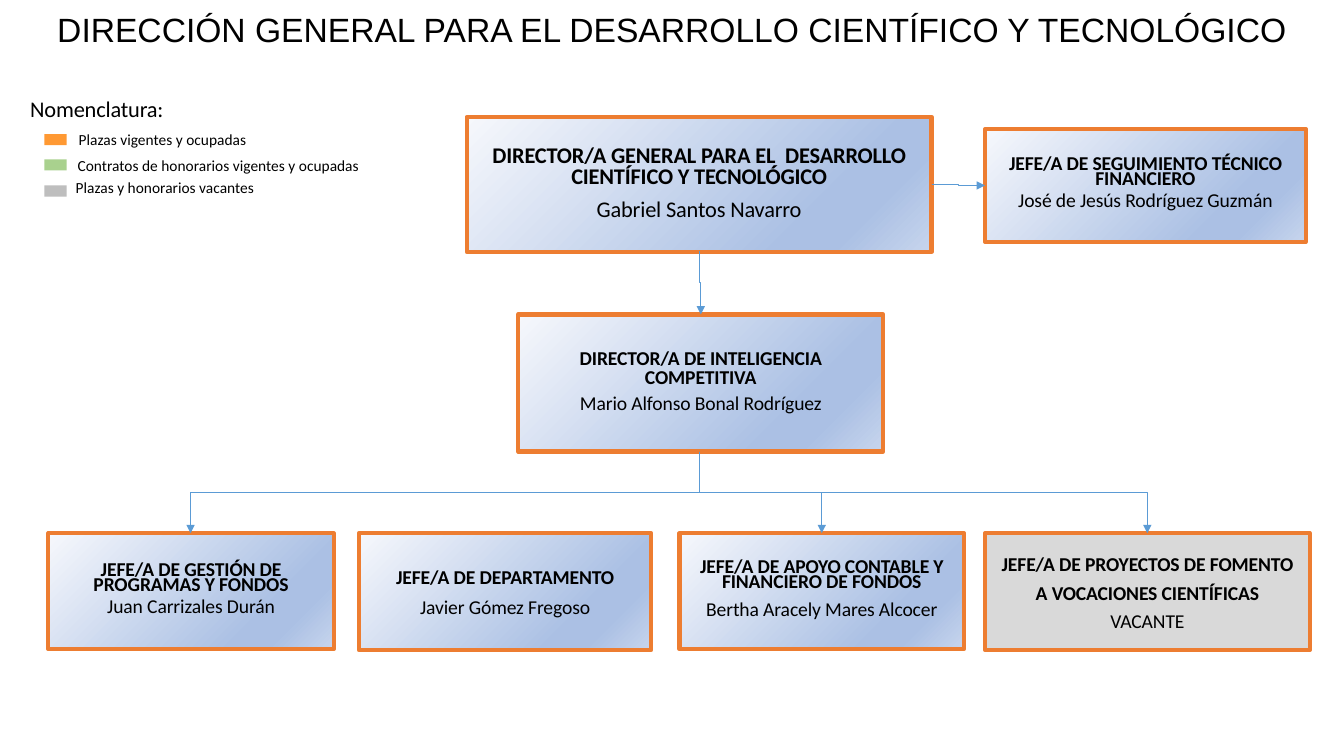
from dataclasses import dataclass

from lxml.etree import SubElement
from pptx import Presentation
from pptx.dml.color import RGBColor
from pptx.enum.shapes import MSO_CONNECTOR, MSO_SHAPE
from pptx.enum.text import MSO_ANCHOR as Anchor, PP_ALIGN as Align
from pptx.oxml.ns import qn
from pptx.util import Pt

PX = 9144  # EMU per px, 100 px to the inch
ORANGE, BLUE, BLACK, VACANT_GREY = "ED7D31", "5B9BD5", "000000", "D9D9D9"
GRADIENT = ((0, "F6F8FC"), (74, "ABC0E4"), (83, "ABC0E4"), (100, "C7D5ED"))


@dataclass
class Line:
    text: str
    size: float
    bold: bool = False
    before: float = 0
    spacing: float | None = None  # points as Pt, or a multiple
    font: str = "Calibri"
    tracking: int = -10
    align: Align = Align.CENTER


@dataclass
class Post:
    left: int
    top: int
    width: int
    height: int
    lines: list[Line]
    vacant: bool = False


@dataclass
class Key:
    color: str
    swatch_top: int
    label: str
    left: int
    top: int
    width: int


@dataclass
class Link:
    start: tuple[int, int]
    end: tuple[int, int]
    vertical: bool = True


def px(value: float) -> int:
    return round(value * PX)


def rgb(color: str) -> RGBColor:
    return RGBColor.from_string(color)


def write(frame, lines: list[Line]) -> None:
    frame.word_wrap = True
    for index, line in enumerate(lines):
        paragraph = frame.add_paragraph() if index else frame.paragraphs[0]
        paragraph.alignment = line.align
        paragraph.space_before = Pt(line.before)
        if line.spacing:
            paragraph.line_spacing = line.spacing
        run = paragraph.add_run()
        run.text = line.text
        run.font.name, run.font.size, run.font.bold = line.font, Pt(line.size), line.bold
        run.font.color.rgb = rgb(BLACK)
        run.font._element.set("spc", str(line.tracking))


def add_rect(slide, left: int, top: int, width: int, height: int):
    rect = slide.shapes.add_shape(MSO_SHAPE.RECTANGLE, px(left), px(top), px(width), px(height))
    rect.shadow.inherit = False
    return rect


def fill_solid(shape, color: str) -> None:
    shape.fill.solid()
    shape.fill.fore_color.rgb = rgb(color)


def fill_gradient(shape) -> None:
    shape.fill.gradient()
    shape.fill.gradient_angle = 315
    stops = shape._element.spPr.find(qn("a:gradFill")).find(qn("a:gsLst"))
    for stop in list(stops):
        stops.remove(stop)
    for position, color in GRADIENT:
        stop = SubElement(stops, qn("a:gs"), pos=str(position * 1000))
        SubElement(stop, qn("a:srgbClr"), val=color)


def add_post(slide, post: Post) -> None:
    box = add_rect(slide, post.left, post.top, post.width, post.height)
    if post.vacant:
        fill_solid(box, VACANT_GREY)
    else:
        fill_gradient(box)
    box.line.color.rgb = rgb(ORANGE)
    box.line.width = Pt(3)
    box.text_frame.vertical_anchor = Anchor.MIDDLE
    write(box.text_frame, post.lines)


def add_link(slide, link: Link) -> None:
    (x1, y1), (x2, y2) = link.start, link.end
    rotation = 0
    if link.vertical:
        # An elbow leaves sideways, so it is laid flat and turned about its centre
        center_x, center_y = (x1 + x2) / 2, (y1 + y2) / 2
        length, spread = y2 - y1, abs(x2 - x1)
        rightward = x2 > x1
        rotation = 270 if rightward else 90
        reach = -length if rightward else length
        x1, x2 = center_x - reach / 2, center_x + reach / 2
        y1, y2 = center_y - spread / 2, center_y + spread / 2
    arrow = slide.shapes.add_connector(MSO_CONNECTOR.ELBOW, px(x1), px(y1), px(x2), px(y2))
    arrow.line.color.rgb = rgb(BLUE)
    arrow.line.width = Pt(0.5)
    properties = arrow._element.spPr
    if rotation:
        properties.find(qn("a:xfrm")).set("rot", str(rotation * 60000))
    SubElement(properties.find(qn("a:ln")), qn("a:tailEnd"), type="triangle")
    SubElement(properties, qn("a:effectLst"))


def add_label(slide, left: int, top: int, width: int, height: int, line: Line):
    label = slide.shapes.add_textbox(px(left), px(top), px(width), px(height))
    write(label.text_frame, [line])
    return label.text_frame


def add_legend_text(slide, left: int, top: int, width: int, height: int, text: str, size: int) -> None:
    tracking = -10 if size == 16 else 0
    line = Line(text, size, before=1.1, tracking=tracking, align=Align.LEFT)
    frame = add_label(slide, left + 1, top, width, height, line)
    frame.margin_left = frame.margin_right = frame.margin_bottom = 0
    frame.margin_top = px(1)


def role(text: str, before: float = 2.3, spacing: float | None = Pt(10.8), size: int = 14) -> Line:
    return Line(text, size, True, before, spacing)


def holder(text: str, before: float = 0.8, spacing: float | None = Pt(15), size: int = 14) -> Line:
    return Line(text, size, False, before, spacing)


POSTS = [
    Post(463, 116, 461, 134, [
        role("DIRECTOR/A GENERAL PARA EL  DESARROLLO CIENTÍFICO Y TECNOLÓGICO", 3, Pt(15.1), 16),
        holder("Gabriel Santos Navarro", 4, None, 16)]),
    Post(977, 128, 318, 112, [
        role("JEFE/A DE SEGUIMIENTO TÉCNICO FINANCIERO"), holder("José de Jesús Rodríguez Guzmán")]),
    Post(514, 312, 362, 136, [
        role("DIRECTOR/A DE INTELIGENCIA COMPETITIVA", 2.6, Pt(13)),
        holder("Mario Alfonso Bonal Rodríguez", 0.8, Pt(18))]),
    Post(48, 529, 283, 115, [
        role("JEFE/A DE GESTIÓN DE PROGRAMAS Y FONDOS"), holder("Juan Carrizales Durán")]),
    Post(356, 529, 290, 116, [
        role("JEFE/A DE DEPARTAMENTO", 4, None), holder("Javier Gómez Fregoso", 0, 1.25)]),
    Post(674, 529, 282, 115, [
        role("JEFE/A DE APOYO CONTABLE Y FINANCIERO DE FONDOS"),
        holder("Bertha Aracely Mares Alcocer", 2.9, None)]),
    Post(977, 529, 322, 116, [
        role("JEFE/A DE PROYECTOS DE FOMENTO", 4.2, None),
        role("A VOCACIONES CIENTÍFICAS", 4.2, None), holder("VACANTE", 2.9, None)], vacant=True),
]
LINKS = [Link((924, 183), (977, 184), vertical=False), Link((694, 249), (695, 312))]
LINKS += [Link((694, 448), (x, 529)) for x in (189, 815, 1138)]
KEYS = [
    Key("FF9933", 133, "Plazas vigentes y ocupadas", 77, 128, 172),
    Key("A9D18E", 158, "Contratos de honorarios vigentes y ocupadas", 76, 154, 287),
    Key("BEBEBE", 184, "Plazas y honorarios vacantes", 74, 176, 265),
]


def main() -> None:
    deck = Presentation()
    deck.slide_width, deck.slide_height = px(1333), px(750)
    slide = deck.slides.add_slide(deck.slide_layouts[6])

    # Posts and reporting lines
    for post in POSTS:
        add_post(slide, post)
    for link in LINKS:
        add_link(slide, link)

    # Title
    title = "DIRECCIÓN GENERAL PARA EL DESARROLLO CIENTÍFICO Y TECNOLÓGICO"
    add_label(slide, 0, 4, 1333, 50, Line(title, 24, font="Arial", tracking=0))

    # Legend
    add_legend_text(slide, 29, 93, 174, 28, "Nomenclatura:", 16)
    for key in KEYS:
        swatch = add_rect(slide, 44, key.swatch_top, 22, 11)
        fill_solid(swatch, key.color)
        swatch.line.fill.background()
        add_legend_text(slide, key.left, key.top, key.width, 20, key.label, 11)

    deck.save("out.pptx")


if __name__ == "__main__":
    main()
